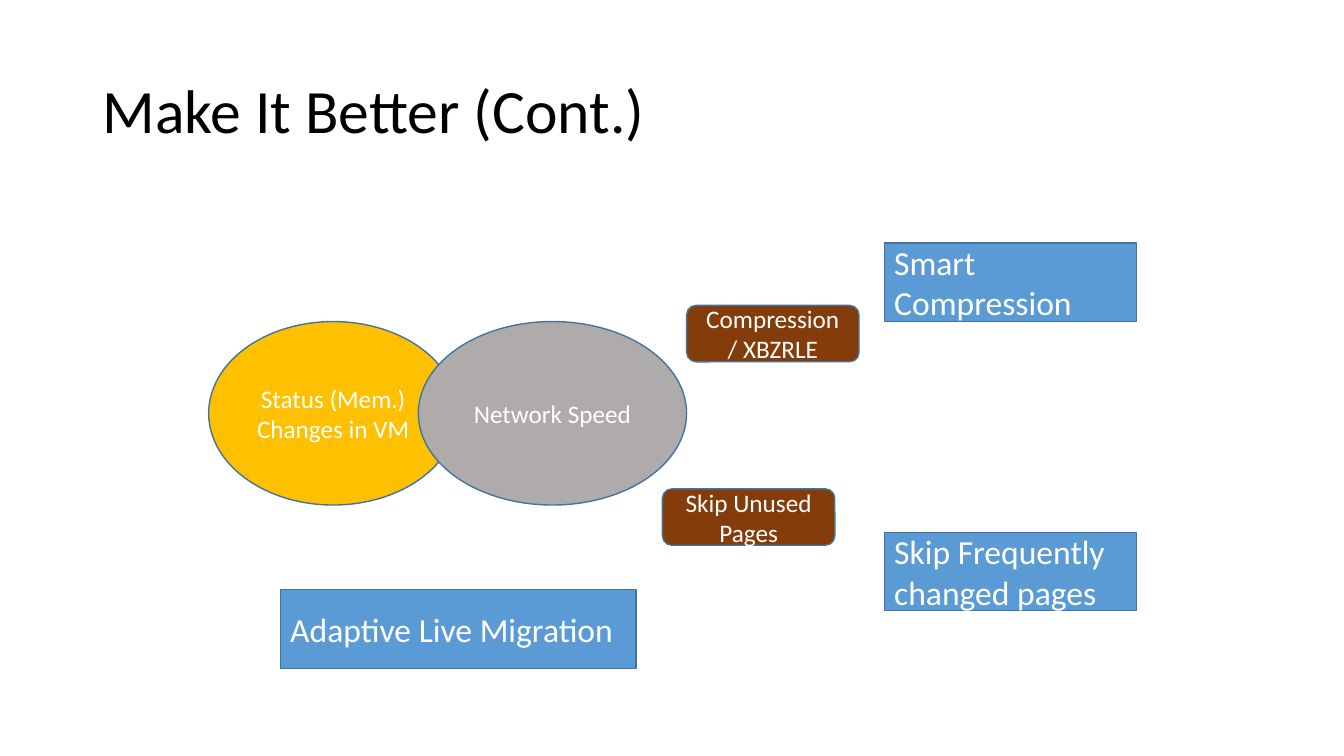
from dataclasses import dataclass

from pptx import Presentation
from pptx.dml.color import RGBColor
from pptx.enum.shapes import MSO_SHAPE
from pptx.enum.text import MSO_ANCHOR, PP_ALIGN
from pptx.util import Inches, Pt


@dataclass(frozen=True)
class Theme:
    font: str = "Calibri"
    title_size: int = 44
    idea_size: int = 24
    label_size: int = 18
    title_color: str = "000000"
    label_color: str = "FFFFFF"
    outline: str = "43739E"
    status: str = "FFC000"
    network: str = "AFABAB"
    technique: str = "843C0B"
    idea: str = "5B9BD5"


THEME = Theme()


def write(holder, text, size, color, align):
    """Fill a shape or text box with one vertically centred paragraph."""
    frame = holder.text_frame
    frame.word_wrap = True
    frame.vertical_anchor = MSO_ANCHOR.MIDDLE
    frame.text = text
    paragraph = frame.paragraphs[0]
    paragraph.alignment = align
    font = paragraph.runs[0].font
    font.name = THEME.font
    font.size = Pt(size)
    font.color.rgb = RGBColor.from_string(color)
    return paragraph


def add_block(slide, preset, box, text, fill, size, align=PP_ALIGN.CENTER):
    """Add one outlined, labelled shape."""
    block = slide.shapes.add_shape(preset, *map(Inches, box))
    block.shadow.inherit = False
    block.fill.solid()
    block.fill.fore_color.rgb = RGBColor.from_string(fill)
    block.line.color.rgb = RGBColor.from_string(THEME.outline)
    block.line.width = Pt(1)
    write(block, text, size, THEME.label_color, align)


def add_title(slide, box, text):
    title = slide.shapes.add_textbox(*map(Inches, box))
    heading = write(title, text, THEME.title_size, THEME.title_color, PP_ALIGN.LEFT)
    heading.line_spacing = 0.9


def add_factors(slide, box):
    """Two overlapping ellipses spanning the box."""
    left, top, width, height = box
    status_width, network_width = 2.47, 2.66
    network_left = left + width - network_width
    for x, factor_width, text, fill in (
        (left, status_width, "Status (Mem.) Changes in VM", THEME.status),
        (network_left, network_width, "Network Speed", THEME.network),
    ):
        add_block(slide, MSO_SHAPE.OVAL, (x, top, factor_width, height),
                  text, fill, THEME.label_size)


def add_techniques(slide, box):
    """Existing techniques: one at the top right, one at the bottom left."""
    left, top, width, height = box
    label_width, label_height = 1.71, 0.56
    for x, y, text in (
        (left + width - label_width, top, "Compression / XBZRLE"),
        (left, top + height - label_height, "Skip Unused Pages"),
    ):
        add_block(slide, MSO_SHAPE.ROUNDED_RECTANGLE,
                  (x, y, label_width, label_height),
                  text, THEME.technique, THEME.label_size)


def add_ideas(slide, box):
    """Improvements: two in the right column, one at the bottom left."""
    left, top, width, height = box
    side_width, wide_width, idea_height = 2.5, 3.53, 0.78
    side_left = left + width - side_width
    for x, y, idea_width, text in (
        (side_left, top, side_width, "Smart Compression"),
        (side_left, top + 2.87, side_width, "Skip Frequently changed pages"),
        (left, top + height - idea_height, wide_width, "Adaptive Live Migration"),
    ):
        add_block(slide, MSO_SHAPE.RECTANGLE, (x, y, idea_width, idea_height),
                  text, THEME.idea, THEME.idea_size, PP_ALIGN.LEFT)


def main():
    deck = Presentation()
    deck.slide_width, deck.slide_height = Inches(13.33), Inches(7.5)
    slide = deck.slides.add_slide(deck.slide_layouts[6])

    add_title(slide, (0.92, 0.4, 11.5, 1.45), "Make It Better (Cont.)")
    add_factors(slide, (2.07, 3.19, 4.74, 1.82))
    add_techniques(slide, (6.57, 3.03, 1.95, 2.38))
    add_ideas(slide, (2.78, 2.41, 8.49, 4.22))

    deck.save("out.pptx")


if __name__ == "__main__":
    main()
